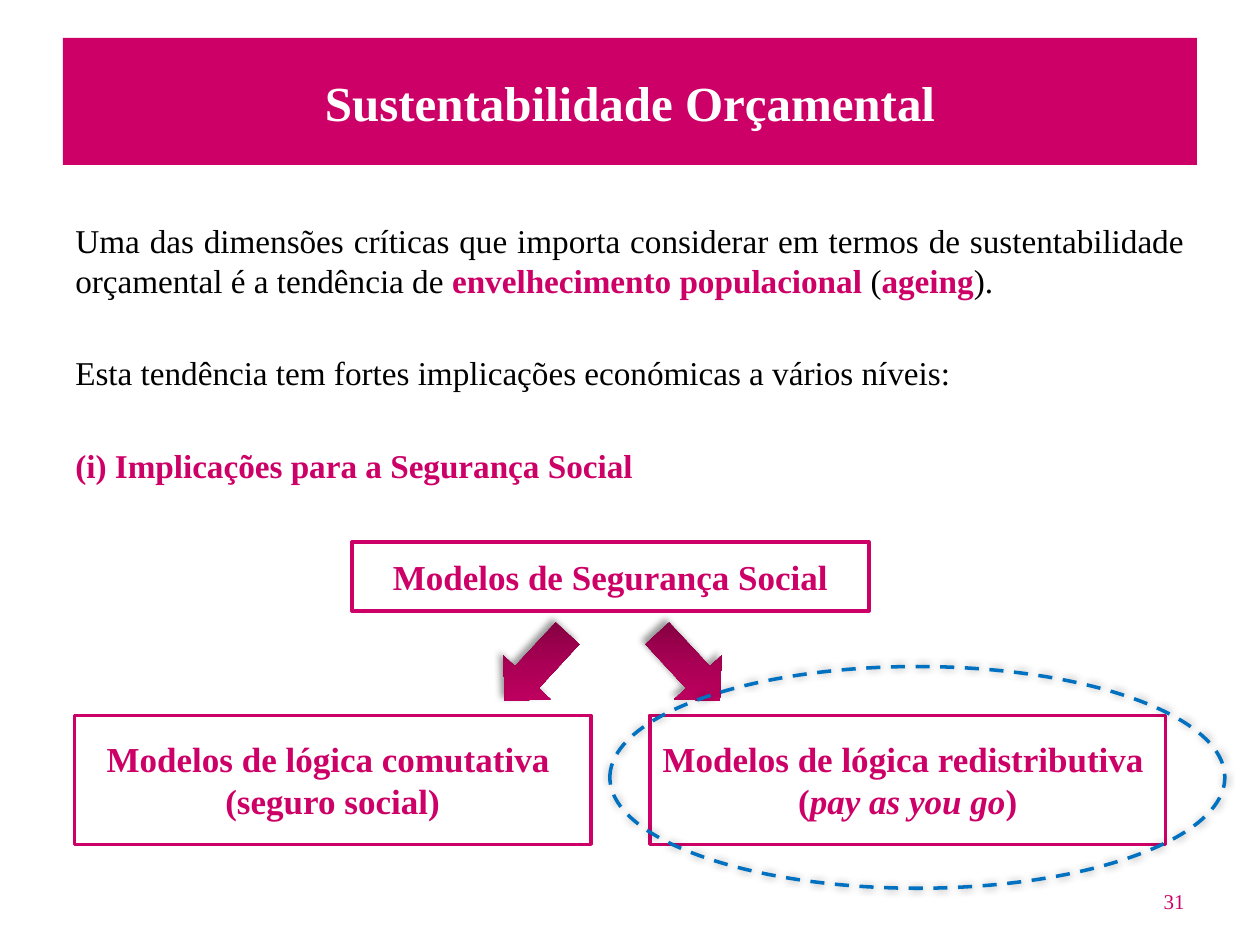
"""Builds the slide on budget sustainability and social security models."""
import pptx
import pptx.dml.color
import pptx.enum.dml
import pptx.enum.shapes
import pptx.enum.text
import pptx.oxml
import pptx.oxml.ns
import pptx.util

Pt = pptx.util.Pt
ALIGN = pptx.enum.text.PP_ALIGN
ANCHOR = pptx.enum.text.MSO_ANCHOR
SHAPE = pptx.enum.shapes.MSO_SHAPE
COLORS = {
    "magenta": "CC0066",
    "wine": "AC0056",
    "dark": "79003C",
    "blue": "0070C0",
    "white": "FFFFFF",
    "black": "000000",
}
FONT = "Times New Roman"


def rgb(name):
    """Return a named color."""
    return pptx.dml.color.RGBColor.from_string(COLORS[name])


def add_effect_xml(shape, body):
    """Append a drawing element to the shape properties."""
    namespace = pptx.oxml.ns.nsdecls("a")
    shape._element.spPr.append(pptx.oxml.parse_xml(body.format(ns=namespace)))


def write_text(shape, paragraphs, *, size, color="magenta", bold=False,
               align=ALIGN.CENTER, anchor=ANCHOR.MIDDLE, gaps=()):
    """Fill a shape with paragraphs, each a list of (text, overrides) spans."""
    frame = shape.text_frame
    frame.word_wrap = True
    frame.vertical_anchor = anchor
    for index, spans in enumerate(paragraphs):
        para = frame.paragraphs[0] if index == 0 else frame.add_paragraph()
        para.alignment = align
        if gaps:
            para.space_before = Pt(gaps[index])
        for text, overrides in spans:
            span = para.add_run()
            span.text = text
            span.font.name = FONT
            span.font.size = Pt(size)
            span.font.bold = overrides.get("bold", bold)
            span.font.italic = overrides.get("italic", False)
            span.font.color.rgb = rgb(overrides.get("color", color))


def add_text(page, place, paragraphs, **style):
    """Add a text box."""
    box = page.shapes.add_textbox(*map(Pt, place))
    write_text(box, paragraphs, **style)


def add_shape(page, kind, place, fill=None, line=None):
    """Add a preset shape with an optional flat fill and outline."""
    shape = page.shapes.add_shape(kind, *map(Pt, place))
    shape.shadow.inherit = False
    if fill:
        shape.fill.solid()
        shape.fill.fore_color.rgb = rgb(fill)
    else:
        shape.fill.background()
    if line:
        shape.line.color.rgb = rgb(line)
        shape.line.width = Pt(2)
    else:
        shape.line.fill.background()
    return shape


def add_shadow(shape, blur, distance, angle):
    """Give a shape a soft black shadow."""
    properties = shape._element.spPr
    for old in properties.findall(pptx.oxml.ns.qn("a:effectLst")):
        properties.remove(old)
    add_effect_xml(shape, (
        f'<a:effectLst {{ns}}><a:outerShdw blurRad="{Pt(blur)}" dist="{Pt(distance)}" '
        f'dir="{angle * 60000}" rotWithShape="0"><a:srgbClr val="{COLORS["black"]}">'
        '<a:alpha val="40000"/></a:srgbClr></a:outerShdw></a:effectLst>'))


def add_model(page, place, paragraphs):
    """Add an outlined box naming a model."""
    box = add_shape(page, SHAPE.RECTANGLE, place, line="magenta")
    write_text(box, paragraphs, size=20, bold=True)


def add_arrow(page, left, rotation, flipped):
    """Add a shaded arrow that points down to one model."""
    arrow = add_shape(page, SHAPE.RIGHT_ARROW, (left, 362.9, 52.6, 36.7))
    arrow.rotation = rotation
    if flipped:
        arrow._element.spPr.xfrm.set("flipH", "1")
    stops = "".join(
        f'<a:gs pos="{position * 1000}"><a:srgbClr val="{COLORS[name]}"/></a:gs>'
        for position, name in ((0, "dark"), (50, "wine"), (100, "magenta")))
    gradient = pptx.oxml.parse_xml(
        f'<a:gradFill {pptx.oxml.ns.nsdecls("a")}><a:gsLst>{stops}</a:gsLst>'
        f'<a:lin ang="{45 * 60000}" scaled="0"/></a:gradFill>')
    properties = arrow._element.spPr
    properties.replace(properties.find(pptx.oxml.ns.qn("a:noFill")), gradient)
    add_shadow(arrow, 4, 3, 225)


def add_highlight(page):
    """Add the dashed ellipse around the redistributive model."""
    ellipse = add_shape(page, SHAPE.OVAL, (348.5, 380.9, 351.4, 126.7), line="blue")
    ellipse.line.dash_style = pptx.enum.dml.MSO_LINE.DASH
    add_shadow(ellipse, 5, 0, 0)


def main():
    """Build and save the deck."""
    deck = pptx.Presentation()
    deck.slide_width, deck.slide_height = Pt(720), Pt(540)
    page = deck.slides.add_slide(deck.slide_layouts[6])

    title = add_shape(page, SHAPE.RECTANGLE, (36, 21.6, 648, 72.7), fill="magenta")
    write_text(title, [[("Sustentabilidade Orçamental", {})]],
               size=28, color="white", bold=True)

    accent = {"color": "magenta", "bold": True}
    add_text(page, (36, 122.4, 648, 360), [
        [("Uma das dimensões críticas que importa considerar em termos de "
          "sustentabilidade orçamental é a tendência de ", {}),
         ("envelhecimento populacional ", accent), ("(", {}),
         ("ageing", accent), (").", {})],
        [("Esta tendência tem fortes implicações económicas a vários níveis:", {})],
        [("(i) Implicações para a Segurança Social", accent)],
    ], size=19, color="black", align=ALIGN.JUSTIFY, anchor=ANCHOR.TOP, gaps=(4, 30, 30))
    add_text(page, (516, 500.6, 168, 28.8), [[("31", {})]], size=12, align=ALIGN.RIGHT)

    add_model(page, (201.3, 309.6, 295.2, 39.6), [[("Modelos de Segurança Social", {})]])
    add_model(page, (42.5, 408.8, 295.2, 73.7),
              [[("Modelos de lógica comutativa ", {})], [("(seguro social)", {})]])
    add_model(page, (371.3, 408.8, 294.8, 73.7),
              [[("Modelos de lógica redistributiva ", {})],
               [("(", {}), ("pay as you go", {"italic": True}), (")", {})]])
    add_arrow(page, 367.2, 47.2, False)
    add_arrow(page, 280.1, 312.8, True)
    add_highlight(page)
    deck.save("out.pptx")


if __name__ == "__main__":
    main()
